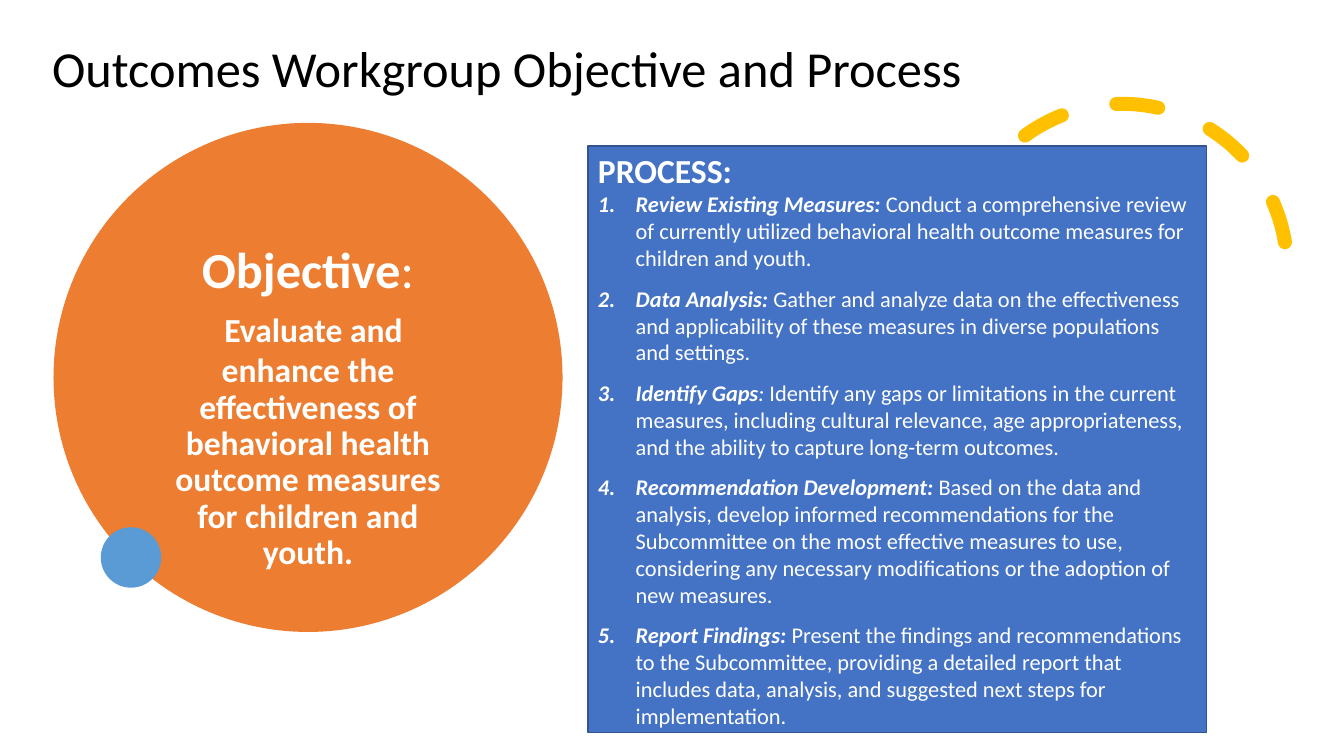
from pptx import Presentation
from pptx.dml.color import RGBColor as RGB
from pptx.enum.dml import MSO_LINE as Dash
from pptx.enum.shapes import MSO_SHAPE as Kind
from pptx.enum.text import MSO_ANCHOR as Anchor, PP_ALIGN as Align
from pptx.oxml.xmlchemy import OxmlElement as Node
from pptx.util import Pt

COLORS = {
    "orange": "ED7D31", "blue": "4472C4", "edge": "325491",
    "sky": "5B9BD5", "gold": "FFC000", "white": "FFFFFF", "black": "000000",
}
GOAL = ("Evaluate and enhance the effectiveness of behavioral health "
        "outcome measures for children and youth.")
# Each step: bold label, italic tail of the label, plain text
STEPS = [
    ("Review Existing Measures: ", "",
     "Conduct a comprehensive review of currently utilized behavioral health "
     "outcome measures for children and youth."),
    ("Data Analysis: ", "",
     "Gather and analyze data on the effectiveness and applicability of these "
     "measures in diverse populations and settings."),
    ("Identify Gaps", ": ",
     "Identify any gaps or limitations in the current measures, including "
     "cultural relevance, age appropriateness, and the ability to capture "
     "long-term outcomes."),
    ("Recommendation Development: ", "",
     "Based on the data and analysis, develop informed recommendations for the "
     "Subcommittee on the most effective measures to use, considering any "
     "necessary modifications or the adoption of new measures."),
    ("Report Findings: ", "",
     "Present the findings and recommendations to the Subcommittee, providing a "
     "detailed report that includes data, analysis, and suggested next steps "
     "for implementation."),
]


class Board:
    """Holds the style and the current slide."""
    font = "Calibri"

    def __init__(self, deck):
        self.slide = deck.slides.add_slide(deck.slide_layouts[6])

    def color(self, name):
        return RGB.from_string(COLORS[name])

    def shape(self, kind, box, fill=None, line=None, width=1):
        item = self.slide.shapes.add_shape(kind, *map(Pt, box))
        item.shadow.inherit = False
        if fill:
            item.fill.solid()
            item.fill.fore_color.rgb = self.color(fill)
        else:
            item.fill.background()
        if line:
            item.line.color.rgb = self.color(line)
            item.line.width = Pt(width)
        else:
            item.line.fill.background()
        return item

    def arc(self, box, turn, ends, line, width):
        item = self.shape(Kind.ARC, box, None, line, width)
        item.rotation = turn
        item.adjustments[0], item.adjustments[1] = ends
        item.line.dash_style = Dash.DASH
        item.line._ln.set("cap", "rnd")
        return item

    def text(self, box):
        frame = self.slide.shapes.add_textbox(*map(Pt, box)).text_frame
        frame.word_wrap = True
        return frame

    def run(self, para, text, size, color="white", bold=False, italic=False):
        run = para.add_run()
        run.text = text
        font = run.font
        font.name, font.size = self.font, Pt(size)
        font.bold, font.italic = bold, italic
        font.color.rgb = self.color(color)

    def number(self, para, indent):
        props = para._p.get_or_add_pPr()
        props.set("marL", str(Pt(indent)))
        props.set("indent", str(-Pt(indent)))
        mark = Node("a:buAutoNum")
        mark.set("type", "arabicPeriod")
        props.append(mark)


def main():
    deck = Presentation()
    deck.slide_width, deck.slide_height = Pt(960), Pt(540)
    board = Board(deck)

    # Objective circle
    board.shape(Kind.OVAL, (38.2, 87.8, 363.6, 363.6), "orange")
    frame = board.text((108, 171.5, 224, 246))
    para = frame.paragraphs[0]
    para.alignment, para.line_spacing = Align.CENTER, 0.9
    board.run(para, "Objective", 36, bold=True)
    board.run(para, ":", 36)
    para.add_line_break()
    board.run(para, " ", 36)
    board.run(para, GOAL, 24, bold=True)

    # Dashed arc and small dot
    board.arc((684, 74.2, 235.4, 235.4), 330.2, (158.17, 17.81), "gold", 10)
    board.shape(Kind.OVAL, (72, 376.6, 43.2, 43.2), "sky")

    # Heading
    frame = board.text((30.2, 23, 736.6, 51))
    board.run(frame.paragraphs[0], "Outcomes Workgroup Objective and Process",
              36, "black")

    # Process panel
    panel = board.shape(Kind.RECTANGLE, (420, 104.4, 442, 419), "blue", "edge")
    frame = panel.text_frame
    frame.word_wrap, frame.vertical_anchor = True, Anchor.MIDDLE
    para = frame.paragraphs[0]
    para.alignment = Align.LEFT
    board.run(para, "PROCESS:", 24, bold=True)
    for i, (label, tail, body) in enumerate(STEPS):
        para = frame.add_paragraph()
        para.alignment = Align.LEFT
        para.space_before = Pt(9.75 if i else 0)
        board.number(para, 27)
        board.run(para, label, 16, bold=True, italic=True)
        if tail:
            board.run(para, tail, 16, italic=True)
        board.run(para, body, 16)

    deck.save("out.pptx")


if __name__ == "__main__":
    main()
